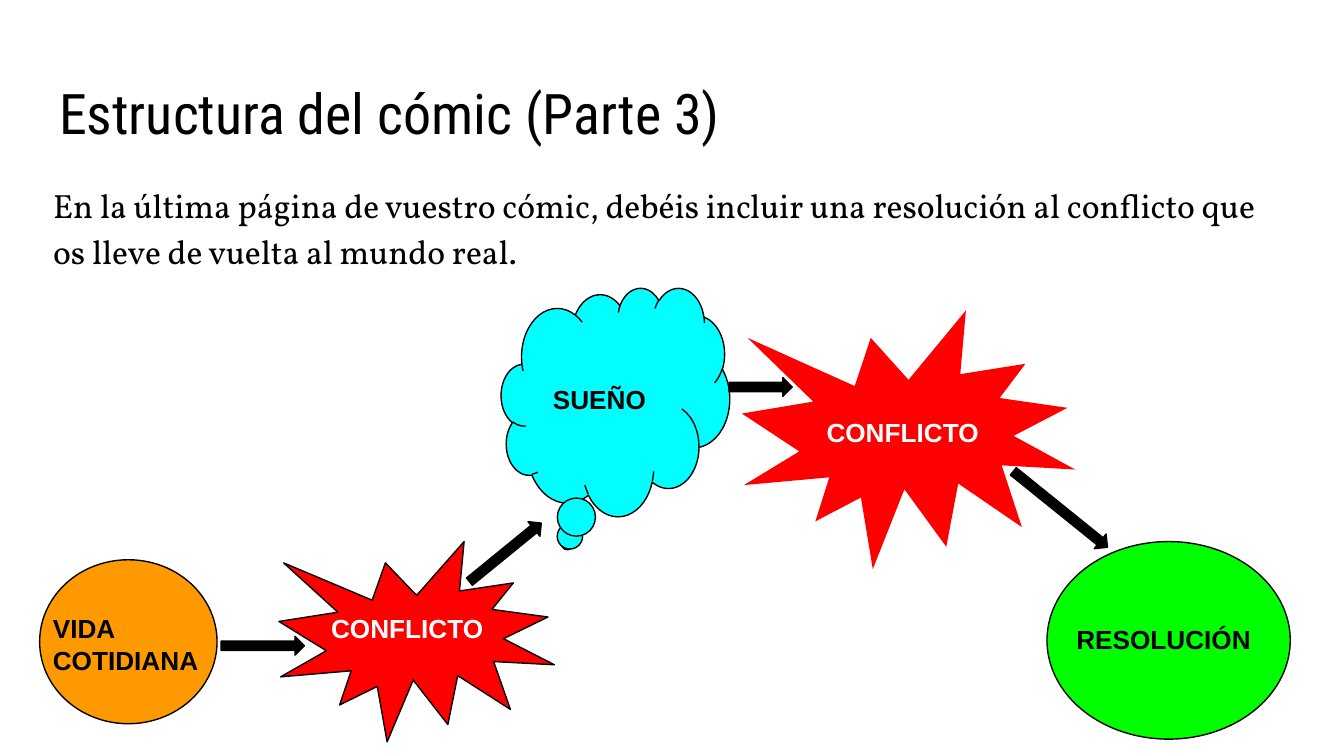
"""Build the slide on the structure of the comic, part 3."""
from pptx import Presentation
from pptx.dml.color import RGBColor
from pptx.enum.shapes import MSO_SHAPE as SHAPE
from pptx.enum.text import MSO_ANCHOR as ANCHOR, MSO_AUTO_SIZE as AUTO, PP_ALIGN as ALIGN
from pptx.oxml.ns import qn
from pptx.util import Pt
from lxml.etree import SubElement

PX = 4572
BLACK = RGBColor(0x00, 0x00, 0x00)
WHITE = RGBColor(0xFF, 0xFF, 0xFF)
RED = RGBColor(0xFF, 0x00, 0x00)
CYAN = RGBColor(0x00, 0xFF, 0xFF)
ORANGE = RGBColor(0xFF, 0x99, 0x00)
GREEN = RGBColor(0x00, 0xFF, 0x00)

LABEL = {"name": "Arial", "size": Pt(14), "bold": True}
TITLE = {"name": "Roboto Condensed", "size": Pt(30), "bold": False}
BODY = {"name": "Vollkorn", "size": Pt(18), "bold": False}
FRAME = {"word_wrap": True, "auto_size": AUTO.NONE}
MARGINS = ("margin_left", "margin_top", "margin_right", "margin_bottom")


def set_attrs(obj, values):
    """Set each attribute named in values."""
    for name, value in values.items():
        setattr(obj, name, value)


def emu(box):
    """Turn the px lengths of a box into EMU."""
    return [v * PX for v in box]


def write(sp, text, font, color=BLACK, anchor=ANCHOR.TOP):
    """Write one left-aligned paragraph and return it."""
    tf = sp.text_frame
    set_attrs(tf, {**FRAME, **dict.fromkeys(MARGINS, 20 * PX), "vertical_anchor": anchor})
    p = tf.paragraphs[0]
    p.alignment = ALIGN.LEFT
    r = p.add_run()
    r.text = text
    set_attrs(r.font, font)
    r.font.color.rgb = color
    return p


def fill_placeholder(sp, box, text, font):
    """Move a placeholder to a box and write its text."""
    set_attrs(sp, dict(zip(("left", "top", "width", "height"), emu(box))))
    return write(sp, text, font)


def format_body(p):
    """Remove the bullet of a body paragraph and set its spacing."""
    pPr = p._p.get_or_add_pPr()
    pPr.set("marL", "0")
    pPr.set("indent", "0")
    SubElement(pPr, qn("a:buNone"))
    set_attrs(p, {"line_spacing": 1.15, "space_before": Pt(0), "space_after": Pt(16)})


def add_figure(s, kind, box, fill, line=BLACK, adjustments=()):
    """Add a filled preset shape, outlined unless line is None."""
    sp = s.shapes.add_shape(kind, *emu(box))
    sp.shadow.inherit = False
    sp.fill.solid()
    sp.fill.fore_color.rgb = fill
    if line is None:
        sp.line.fill.background()
    else:
        sp.line.color.rgb = line
        sp.line.width = Pt(0.75)
    for i, value in enumerate(adjustments):
        sp.adjustments[i] = value
    return sp


def add_label(s, text, box, color=BLACK):
    """Add a text box with a bold label."""
    write(s.shapes.add_textbox(*emu(box)), text, LABEL, color)


def add_arrow(s, left, top, width, rotation=0):
    """Add a thin black block arrow."""
    sp = add_figure(s, SHAPE.RIGHT_ARROW, (left, top, width, 28), BLACK)
    sp.rotation = rotation


def main():
    """Build and save the slide."""
    prs = Presentation()
    prs.slide_width, prs.slide_height = emu((2000, 1125))
    s = prs.slides.add_slide(prs.slide_layouts[1])
    title, body = s.placeholders
    fill_placeholder(title, (68, 97, 1864, 126), "Estructura del cómic (Parte 3)", TITLE)
    format_body(fill_placeholder(
        body, (59, 246, 1864, 730),
        "En la última página de vuestro cómic, debéis incluir una resolución "
        "al conflicto que os lleve de vuelta al mundo real.", BODY))

    add_figure(s, SHAPE.EXPLOSION1, (415, 806, 410, 298), RED)
    add_figure(s, SHAPE.CLOUD_CALLOUT, (746, 428, 340, 340), CYAN,
               adjustments=(-0.21, 0.62))
    add_label(s, "CONFLICTO", (473, 892, 314, 82), WHITE)
    add_label(s, "SUEÑO", (803, 550, 264, 82))
    add_figure(s, SHAPE.OVAL, (59, 833, 264, 244), ORANGE)
    add_label(s, "VIDA COTIDIANA", (59, 892, 264, 186))
    conflict = add_figure(s, SHAPE.EXPLOSION1, (1104, 462, 496, 385), RED, line=None)
    write(conflict, "CONFLICTO", LABEL, WHITE, ANCHOR.MIDDLE)
    add_figure(s, SHAPE.OVAL, (1558, 806, 362, 294), GREEN)
    add_label(s, "RESOLUCIÓN", (1582, 908, 314, 94))

    for arrow in ((329, 947, 124), (683, 808, 138, 320.8),
                  (1488, 744, 180, 38.9), (1085, 562, 94)):
        add_arrow(s, *arrow)
    prs.save("out.pptx")


if __name__ == "__main__":
    main()
